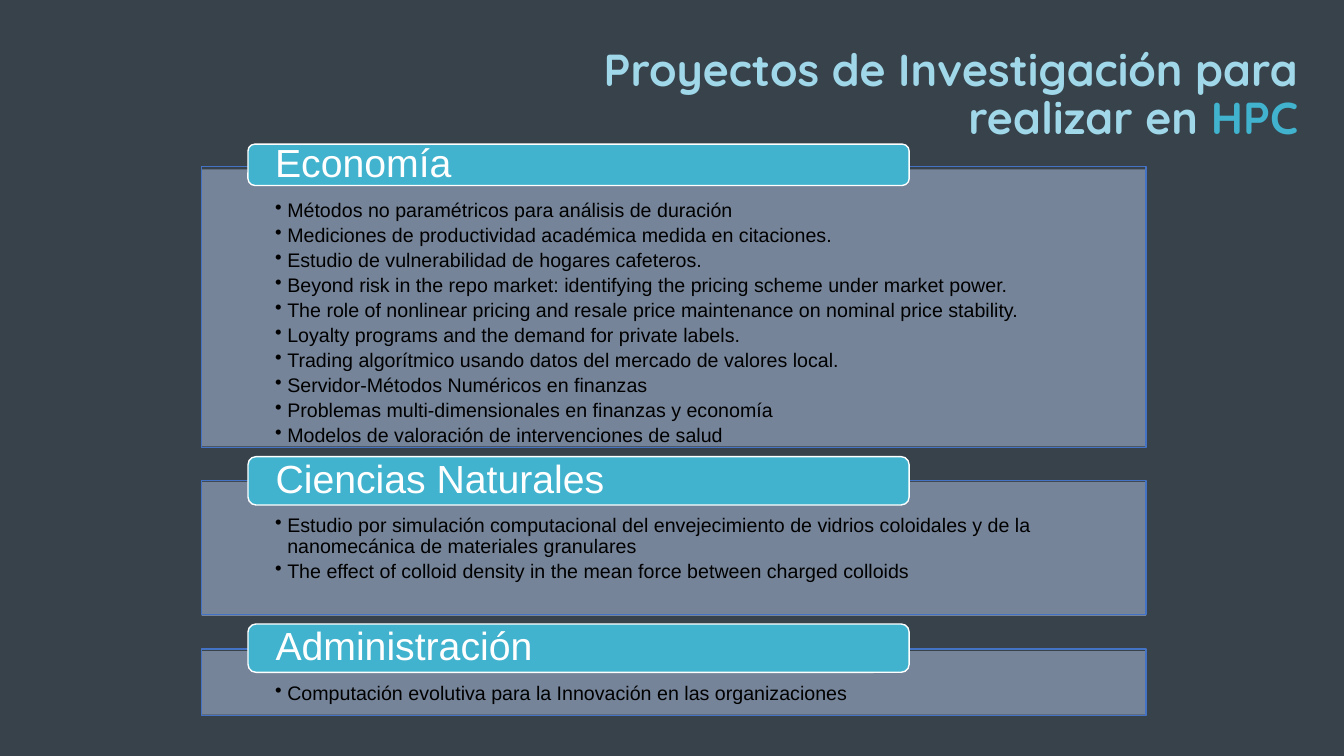
from pptx import Presentation
from pptx.dml.color import RGBColor
from pptx.enum.shapes import MSO_SHAPE
from pptx.enum.text import MSO_ANCHOR, MSO_AUTO_SIZE, PP_ALIGN
from pptx.oxml.ns import qn
from pptx.util import Inches, Pt
from lxml import etree

RECTANGLE = MSO_SHAPE.RECTANGLE
ROUNDED = MSO_SHAPE.ROUNDED_RECTANGLE
TOP, MIDDLE = MSO_ANCHOR.TOP, MSO_ANCHOR.MIDDLE
LEFT, RIGHT = PP_ALIGN.LEFT, PP_ALIGN.RIGHT
NO_AUTOFIT = MSO_AUTO_SIZE.NONE

SLATE = RGBColor(0x3E, 0x4A, 0x54)
DARK_SLATE = RGBColor(0x35, 0x3F, 0x48)
PALE_CYAN = RGBColor(0xA0, 0xD8, 0xE9)
CYAN = RGBColor(0x41, 0xB3, 0xCE)
PALE_BLUE = RGBColor(0xB4, 0xC7, 0xE7)
BLUE = RGBColor(0x44, 0x72, 0xC4)
BLACK = RGBColor(0, 0, 0)
WHITE = RGBColor(0xFF, 0xFF, 0xFF)

WIDTH, HEIGHT = Inches(13.33), Inches(7.5)
COLUMN, ROW = WIDTH / 100, HEIGHT / 75
PANEL_LEFT, PANEL_WIDTH = 15, 70.28
HEADING_INDENT, HEADING_SHARE = 3.45, 0.7

# Rows: heading top and height, outline top and height, fill top and height
SECTIONS = [
    ("Economía", (14.3, 4.1), (16.5, 27.9), (16.8, 27.5), [
        "Métodos no paramétricos para análisis de duración",
        "Mediciones de productividad académica medida en citaciones.",
        "Estudio de vulnerabilidad de hogares cafeteros.",
        "Beyond risk in the repo market: identifying the pricing scheme under market power.",
        "The role of nonlinear pricing and resale price maintenance on nominal price stability.",
        "Loyalty programs and the demand for private labels.",
        "Trading algorítmico usando datos del mercado de valores local.",
        "Servidor-Métodos Numéricos en finanzas",
        "Problemas multi-dimensionales en finanzas y economía",
        "Modelos de valoración de intervenciones de salud",
    ]),
    ("Ciencias Naturales", (45.3, 4.8), (47.7, 13.3), (47.8, 13.3), [
        "Estudio por simulación computacional del envejecimiento de vidrios coloidales "
        "y de la nanomecánica de materiales granulares",
        "The effect of colloid density in the mean force between charged colloids",
    ]),
    ("Administración", (61.9, 4.8), (64.4, 6.6), (64.6, 6.3), [
        "Computación evolutiva para la Innovación en las organizaciones",
    ]),
]


def place(shape, left, top, width, height):
    shape.left, shape.width = round(left * COLUMN), round(width * COLUMN)
    shape.top, shape.height = round(top * ROW), round(height * ROW)


def add_box(slide, box, kind=RECTANGLE, fill=None, opacity=100, line=None):
    shape = slide.shapes.add_shape(kind, 0, 0, 0, 0)
    place(shape, *box)
    shape.shadow.inherit = False
    if fill is None:
        shape.fill.background()
    else:
        shape.fill.solid()
        shape.fill.fore_color.rgb = fill
        if opacity < 100:
            color = shape.fill._xPr.find(qn("a:solidFill"))[0]
            etree.SubElement(color, qn("a:alpha")).set("val", str(opacity * 1000))
    if line is None:
        shape.line.fill.background()
    else:
        shape.line.color.rgb = line
        shape.line.width = Pt(1)
    return shape


def add_bullet(paragraph):
    properties = paragraph._p.get_or_add_pPr()
    properties.set("marL", str(Inches(0.12)))
    properties.set("indent", str(Inches(-0.12)))
    etree.SubElement(properties, qn("a:buChar")).set("char", "•")


def write_text(shape, paragraphs, size, font="Arial", bold=False, align=LEFT,
               anchor=TOP, margins=(0.1, 0.05, 0.1, 0.05), after=0, bullets=False):
    frame = shape.text_frame
    frame.word_wrap = True
    frame.auto_size = NO_AUTOFIT
    frame.vertical_anchor = anchor
    (frame.margin_left, frame.margin_top,
     frame.margin_right, frame.margin_bottom) = map(Inches, margins)
    for index, runs in enumerate(paragraphs):
        paragraph = frame.add_paragraph() if index else frame.paragraphs[0]
        if bullets:
            add_bullet(paragraph)
        paragraph.alignment = align
        paragraph.line_spacing = 0.9
        paragraph.space_before = Pt(0)
        paragraph.space_after = Pt(after)
        for text, color in runs:
            run = paragraph.add_run()
            run.text = text
            run.font.name = font
            run.font.size = Pt(size)
            run.font.bold = bold
            run.font.color.rgb = color


def add_backdrop(slide):
    slide.background.fill.solid()
    slide.background.fill.fore_color.rgb = SLATE
    add_box(slide, (0, 0, 100, 75), fill=DARK_SLATE, opacity=71)


def add_title(slide, box):
    title = slide.shapes.title
    place(title, *box)
    runs = [("Proyectos de Investigación para realizar en ", PALE_CYAN), ("HPC", CYAN)]
    write_text(title, [runs], 32, font="Quicksand", bold=True, align=RIGHT, anchor=MIDDLE)
    slide.shapes._spTree.append(title._element)


def add_section(slide, left, width, heading, heading_rows, outline_rows, items):
    outline_top, outline_height = outline_rows
    panel = add_box(slide, (left, outline_top, width, outline_height), line=BLUE)
    write_text(panel, [[(item, BLACK)] for item in items], 14,
               margins=(0.73, 0.34, 0.73, 0.11), after=2.7, bullets=True)
    heading_top, heading_height = heading_rows
    label = add_box(slide, (left + HEADING_INDENT, heading_top,
                            width * HEADING_SHARE, heading_height),
                    kind=ROUNDED, fill=CYAN, line=WHITE)
    write_text(label, [[(heading, WHITE)]], 28, anchor=MIDDLE, margins=(0.25, 0, 0.25, 0))


def main():
    presentation = Presentation()
    presentation.slide_width, presentation.slide_height = WIDTH, HEIGHT
    slide = presentation.slides.add_slide(presentation.slide_layouts[5])
    add_backdrop(slide)
    add_title(slide, (31.65, 2.3, 65.7, 14.5))
    for _, _, _, (fill_top, fill_height), _ in SECTIONS:
        add_box(slide, (PANEL_LEFT, fill_top, PANEL_WIDTH, fill_height),
                fill=PALE_BLUE, opacity=50)
    for heading, heading_rows, outline_rows, _, items in SECTIONS:
        add_section(slide, PANEL_LEFT, PANEL_WIDTH, heading, heading_rows,
                    outline_rows, items)
    presentation.save("out.pptx")


if __name__ == "__main__":
    main()
